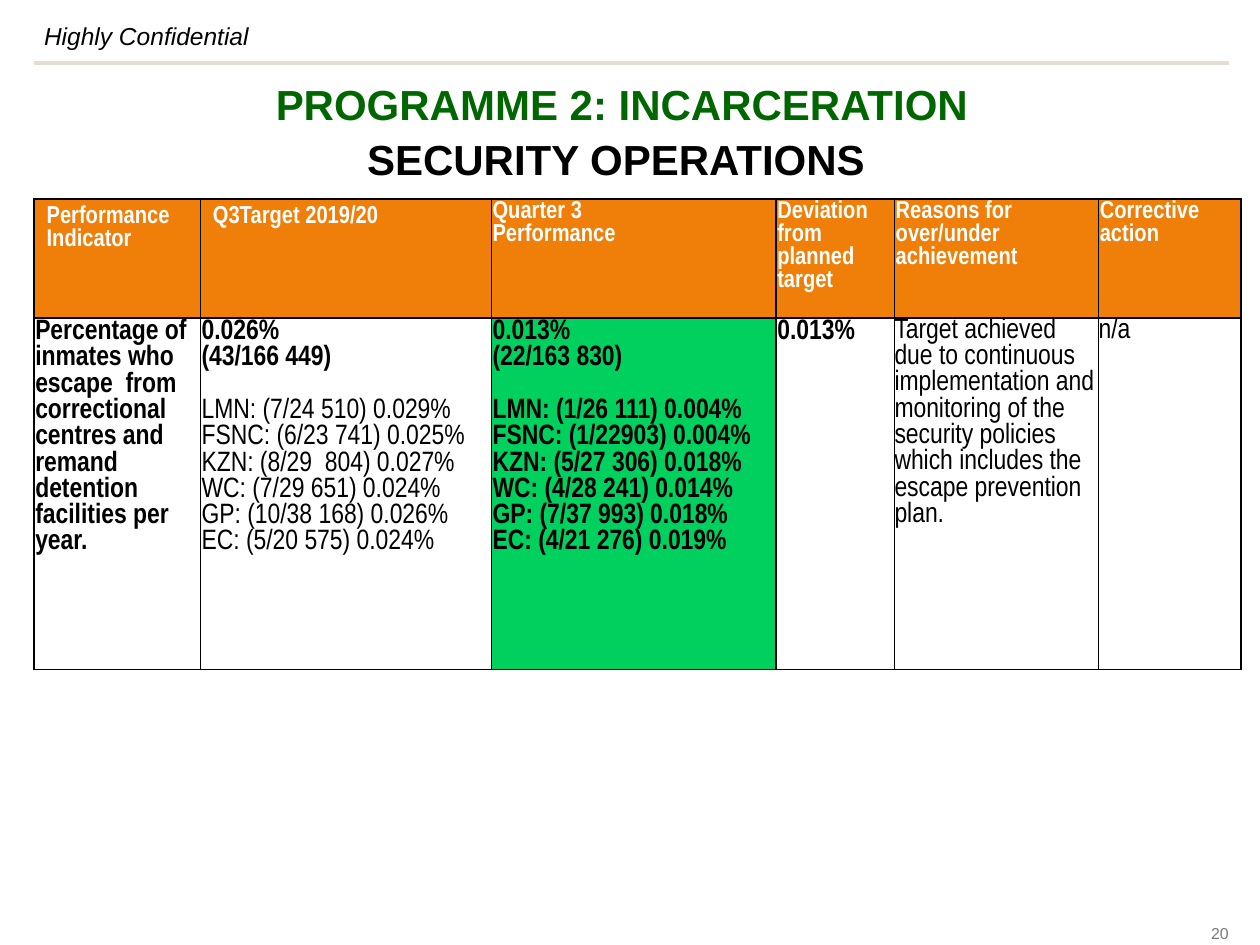
import pptx
import pptx.dml.color
import pptx.enum.shapes
import pptx.enum.text
import pptx.oxml
import pptx.oxml.ns
import pptx.util

GRID_COLUMNS, GRID_ROWS = 1000, 750
SLIDE_WIDTH, SLIDE_HEIGHT = pptx.util.Inches(10), pptx.util.Inches(7.5)
BLACK, WHITE, ORANGE, GREEN = "000000", "FFFFFF", "F07F09", "00D05E"
ALIGN = pptx.enum.text.PP_ALIGN
ANCHOR = pptx.enum.text.MSO_ANCHOR

COLUMN_SPANS = [132, 231, 226, 94, 162, 113]
ROW_SPANS = [94, 279]
HEADERS = [
    "Performance Indicator",
    "Q3Target 2019/20",
    "Quarter 3\vPerformance",
    "Deviation from planned target",
    "Reasons for over/under achievement",
    "Corrective action",
]
INDICATOR = (
    "Percentage of inmates who escape  from correctional centres "
    "and remand detention facilities per year."
)
REASON = (
    "Target achieved due to continuous implementation and monitoring of the "
    "security policies which includes the escape prevention plan."
)
TARGET_TOTAL = ["0.026%", "(43/166 449)"]
TARGET_REGIONS = [
    "LMN: (7/24 510) 0.029%",
    "FSNC: (6/23 741) 0.025%",
    "KZN: (8/29  804) 0.027%",
    "WC: (7/29 651) 0.024%",
    "GP: (10/38 168) 0.026%",
    "EC: (5/20 575) 0.024%",
]
RESULT_TOTAL = ["0.013%", "(22/163 830)"]
RESULT_REGIONS = [
    "LMN: (1/26 111) 0.004%",
    "FSNC: (1/22903) 0.004%",
    "KZN: (5/27 306) 0.018%",
    "WC: (4/28 241) 0.014%",
    "GP: (7/37 993) 0.018%",
    "EC: (4/21 276) 0.019%",
]


def across(columns):
    """Return the width of a number of grid columns."""
    return round(SLIDE_WIDTH * columns / GRID_COLUMNS)


def down(rows):
    """Return the height of a number of grid rows."""
    return round(SLIDE_HEIGHT * rows / GRID_ROWS)


def colour(hex_string):
    """Turn a hex string into a colour."""
    return pptx.dml.color.RGBColor.from_string(hex_string)


def style_font(paragraph, name, size, hex_string, bold=False, italic=False):
    """Set the font of a whole paragraph."""
    font = paragraph.font
    font.name, font.size = name, pptx.util.Pt(size)
    font.bold, font.italic = bold, italic
    font.color.rgb = colour(hex_string)


def set_margins(target, margins):
    """Set left, top, right and bottom margins in inches."""
    sides = ("margin_left", "margin_top", "margin_right", "margin_bottom")
    for side, margin in zip(sides, margins):
        setattr(target, side, pptx.util.Inches(margin))


def add_text(slide, box, lines, size, align=ALIGN.LEFT, anchor=ANCHOR.TOP,
             margin=0, spacing=None, bold=False, italic=False):
    """Add a text box with one paragraph per (text, colour) line."""
    left, top, width, height = box
    shape = slide.shapes.add_textbox(across(left), down(top), across(width), down(height))
    frame = shape.text_frame
    frame.word_wrap = True
    frame.vertical_anchor = anchor
    set_margins(frame, [margin] * 4)
    frame.text = "\n".join(text for text, _ in lines)
    for paragraph, (_, hex_string) in zip(frame.paragraphs, lines):
        paragraph.alignment = align
        paragraph.line_spacing = spacing
        style_font(paragraph, "Arial", size, hex_string, bold, italic)


def add_rule(slide, left, right, row, hex_string, weight):
    """Add a horizontal line without a shadow."""
    line = slide.shapes.add_connector(
        pptx.enum.shapes.MSO_CONNECTOR.STRAIGHT,
        across(left), down(row), across(right), down(row))
    line.line.color.rgb = colour(hex_string)
    line.line.width = pptx.util.Pt(weight)
    properties = line._element.spPr
    properties.append(properties.makeelement(pptx.oxml.ns.qn("a:effectLst"), {}))


def set_borders(cell, hex_string, weight):
    """Draw a solid border on all four sides of a cell."""
    properties = cell._tc.get_or_add_tcPr()
    for side in ("lnL", "lnR", "lnT", "lnB"):
        properties.append(pptx.oxml.parse_xml(
            f'<a:{side} {pptx.oxml.ns.nsdecls("a")} w="{pptx.util.Pt(weight)}">'
            f'<a:solidFill><a:srgbClr val="{hex_string}"/></a:solidFill></a:{side}>'))


def fill_cell(cell, groups, size, text_colour, margins, fill=None):
    """Write (lines, bold) groups into a cell, set apart by a line's space."""
    set_borders(cell, BLACK, 1)
    if fill:
        cell.fill.solid()
        cell.fill.fore_color.rgb = colour(fill)
    else:
        cell.fill.background()
    if margins:
        set_margins(cell, margins)
    cell.text = "\n".join(line for lines, _ in groups for line in lines)
    paragraphs = iter(cell.text_frame.paragraphs)
    for group_number, (lines, bold) in enumerate(groups):
        for line_number, paragraph in zip(range(len(lines)), paragraphs):
            style_font(paragraph, "Arial Narrow", size, text_colour, bold)
            if group_number and not line_number:
                paragraph.space_before = pptx.util.Pt(15)


def add_performance_table(slide):
    """Add the table of the indicator, its target and its result."""
    table = slide.shapes.add_table(
        len(ROW_SPANS), len(COLUMN_SPANS), across(27), down(158),
        across(sum(COLUMN_SPANS)), down(sum(ROW_SPANS))).table
    table.first_row = table.horz_banding = False
    for column, span in zip(table.columns, COLUMN_SPANS):
        column.width = across(span)
    for row, span in zip(table.rows, ROW_SPANS):
        row.height = down(span)

    tight, none = (0.01, 0.01, 0.01, 0), (0, 0, 0, 0)
    for index, header in enumerate(HEADERS):
        margins = tight if index > 1 else None
        fill_cell(table.cell(0, index), [([header], True)], 14, WHITE, margins, ORANGE)
    body = [
        ([([INDICATOR], True)], tight, None),
        ([(TARGET_TOTAL, True), (TARGET_REGIONS, False)], tight, None),
        ([(RESULT_TOTAL, True), (RESULT_REGIONS, True)], tight, GREEN),
        ([(["0.013%"], True)], tight, None),
        ([([REASON], False)], none, None),
        ([(["n/a"], False)], none, None),
    ]
    for index, (groups, margins, fill) in enumerate(body):
        fill_cell(table.cell(1, index), groups, 16, BLACK, margins, fill)


def main():
    """Build the slide and save it."""
    presentation = pptx.Presentation()
    presentation.slide_width, presentation.slide_height = SLIDE_WIDTH, SLIDE_HEIGHT
    slide = presentation.slides.add_slide(presentation.slide_layouts[6])
    add_rule(slide, 27, 975, 50, "E3DED1", 2.25)
    add_text(slide, (946, 733, 29, 15), [("20", "77787B")], 9,
             align=ALIGN.RIGHT, anchor=ANCHOR.MIDDLE)
    add_text(slide, (27, 9, 184, 39), [("Highly Confidential", BLACK)], 14,
             margin=0.08, italic=True)
    add_performance_table(slide)
    title = [("PROGRAMME 2: INCARCERATION", "006600"), ("SECURITY OPERATIONS ", BLACK)]
    add_text(slide, (19, 58, 949, 89), title, 24,
             align=ALIGN.CENTER, spacing=1.1, bold=True)
    presentation.save("out.pptx")


if __name__ == "__main__":
    main()
